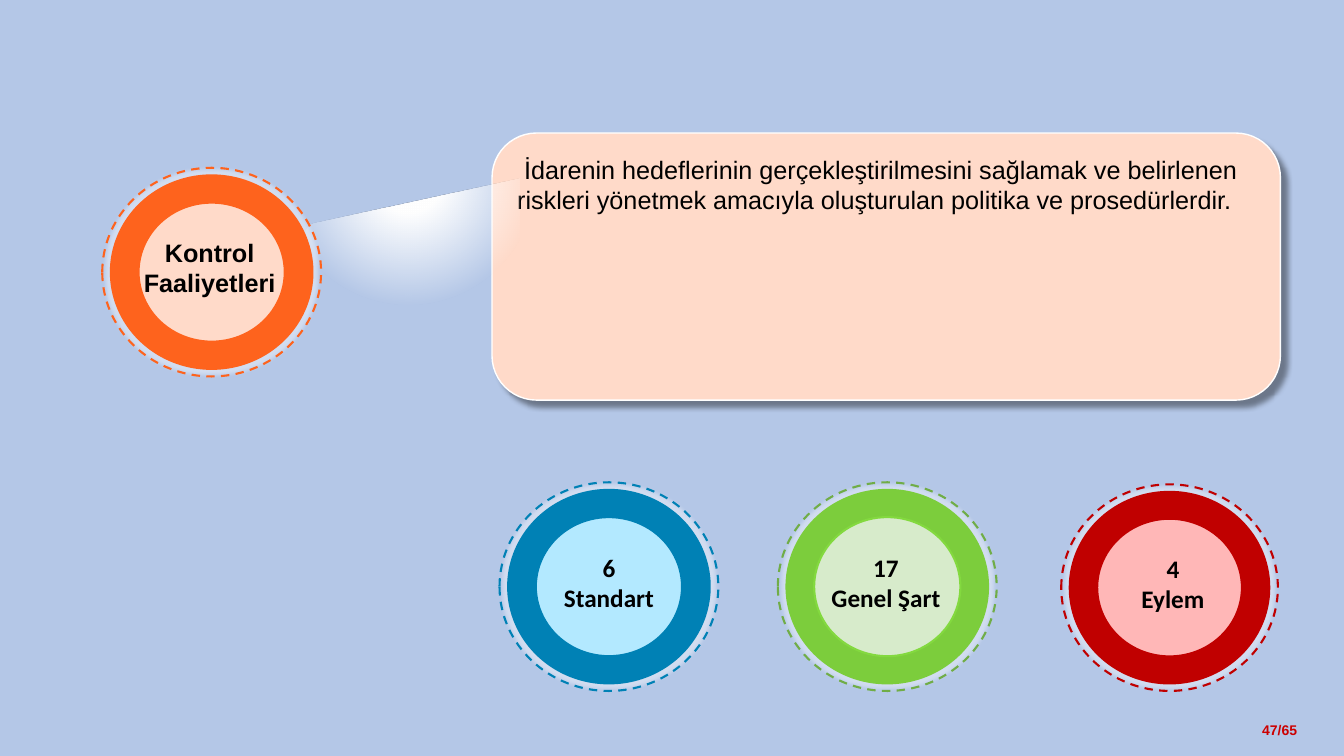
from math import cos, pi, sin

from pptx import Presentation
from pptx.dml.color import RGBColor
from pptx.enum.dml import MSO_LINE
from pptx.enum.shapes import MSO_SHAPE
from pptx.enum.text import MSO_ANCHOR, MSO_AUTO_SIZE, PP_ALIGN
from pptx.oxml import parse_xml
from pptx.oxml.ns import nsdecls
from pptx.util import Inches, Pt

GLOW = '<a:glow {} rad="76200"><a:srgbClr val="FFFFFF"><a:alpha val="40000"/></a:srgbClr></a:glow>'
SHADE = ('<a:outerShdw {} blurRad="50800" dist="76200" dir="3000000" algn="tl" rotWithShape="0">'
         '<a:srgbClr val="000000"><a:alpha val="40000"/></a:srgbClr></a:outerShdw>')
LIGHT = ('<a:gradFill {} rotWithShape="0"><a:gsLst>'
         '<a:gs pos="24000"><a:srgbClr val="FFFFFF"/></a:gs>'
         '<a:gs pos="89000"><a:srgbClr val="FFFFFF"><a:alpha val="0"/></a:srgbClr></a:gs></a:gsLst>'
         '<a:path path="circle"><a:fillToRect l="50000" t="-80000" r="50000" b="180000"/></a:path>'
         '</a:gradFill>')


def paint(code):
    return RGBColor.from_string(code)


def node(text):
    return parse_xml(text.format(nsdecls("a")))


class Board:
    """Draw styled elements on one slide, with lengths in percent of its size."""

    def __init__(self, deck, back):
        self.deck = deck
        self.slide = deck.slides.add_slide(deck.slide_layouts[6])
        self.slide.background.fill.solid()
        self.slide.background.fill.fore_color.rgb = paint(back)

    def spot(self, x, y):
        return round(self.deck.slide_width * x / 100), round(self.deck.slide_height * y / 100)

    def area(self, x, y, w, h):
        return *self.spot(x, y), *self.spot(w, h)

    def shape(self, host, kind, area, fill=None, line=None, width=1.5, effect=None):
        item = host.add_shape(kind, *self.area(*area))
        item.shadow.inherit = False
        if effect:
            item._element.spPr.find(node("<a:effectLst {}/>").tag).append(node(effect))
        if fill:
            item.fill.solid()
            item.fill.fore_color.rgb = paint(fill)
        else:
            item.fill.background()
        if line:
            item.line.color.rgb = paint(line)
            item.line.width = Pt(width)
        else:
            item.line.fill.background()
        return item

    def words(self, frame, text, font="Arial", size=18, ink="000000", bold=True,
              align=PP_ALIGN.LEFT):
        frame.text = text
        for part in frame.paragraphs:
            part.alignment = align
            for run in part.runs:
                run.font.name = font
                run.font.size = Pt(size)
                run.font.bold = bold
                run.font.color.rgb = paint(ink)

    def label(self, host, area, text, wrap=True, **style):
        frame = host.add_textbox(*self.area(*area)).text_frame
        frame.word_wrap = wrap
        frame.auto_size = MSO_AUTO_SIZE.SHAPE_TO_FIT_TEXT
        self.words(frame, text, **style)

    def panel(self, area, text):
        item = self.shape(self.slide.shapes, MSO_SHAPE.ROUNDED_RECTANGLE, area,
                          "FFDAC9", "FFFFFF", 1, SHADE)
        frame = item.text_frame
        frame.word_wrap = True
        frame.vertical_anchor = MSO_ANCHOR.TOP
        frame.margin_left, frame.margin_top = Inches(0.12), Inches(0.08)
        frame.margin_right, frame.margin_bottom = Inches(0.08), Inches(0.25)
        self.words(frame, text, bold=False)

    def dial(self, x, y, text, ring, core, dash=None, edge=None, font="Calibri", shift=0, scale=1):
        host = self.slide.shapes.add_group_shape().shapes

        def around(w, h):
            w, h = w * scale, h * scale
            return x - w / 2, y - h / 2, w, h

        oval = MSO_SHAPE.OVAL
        self.shape(host, oval, around(15.15, 25.87), ring, effect=GLOW)
        rim = self.shape(host, oval, around(16.28, 27.6), line=dash or ring)
        rim.line.dash_style = MSO_LINE.DASH
        self.shape(host, oval, around(10.88, 18.4), core, edge or ring)
        left, top, w, h = around(17.33, 9.47)
        self.label(host, (left + shift, top - 0.5, w, h), text, font=font, align=PP_ALIGN.CENTER)

    def beam(self, x, y, rx, ry, right, top, low):
        turns = [pi * (0.5 + step / 12) for step in range(13)]
        arc = [self.spot(x + rx * cos(turn), y + ry * sin(turn)) for turn in turns]
        pen = self.slide.shapes.build_freeform(*self.spot(right, top))
        pen.add_line_segments([self.spot(right, low), *arc])
        item = pen.convert_to_shape()
        item.shadow.inherit = False
        item.line.fill.background()
        item.fill.background()
        props = item._element.spPr
        blank = props.find(node("<a:noFill {}/>").tag)
        props.replace(blank, node(LIGHT))


def main():
    deck = Presentation()
    deck.slide_width, deck.slide_height = Inches(13.33), Inches(7.5)
    board = Board(deck, "B4C7E7")
    board.label(board.slide.shapes, (93.17, 94.8, 4.28, 3.6), "47/65", wrap=False,
                size=10, ink="CC0000")
    board.panel((36.61, 17.6, 58.66, 35.33),
                " İdarenin hedeflerinin gerçekleştirilmesini sağlamak ve belirlenen riskleri "
                "yönetmek amacıyla oluşturulan politika ve prosedürlerdir.")
    board.dial(45.31, 77.6, "6\nStandart", "0081B5", "B3E9FF")
    board.dial(66.02, 77.6, "17\nGenel Şart", "7CCD3C", "D7EBCB", "70AD47", "83D93F", shift=-0.1)
    board.beam(23.48, 35.47, 1.35, 6, right=38.63, top=23.6, low=47.33)
    board.dial(15.75, 36, "Kontrol\nFaaliyetleri", "FE631D", "FFDAC9", font="Arial", shift=-0.15)
    board.dial(87.02, 77.73, "4\nEylem", "C00000", "FFB7B7", shift=0.25, scale=0.99)
    deck.save("out.pptx")


if __name__ == "__main__":
    main()
